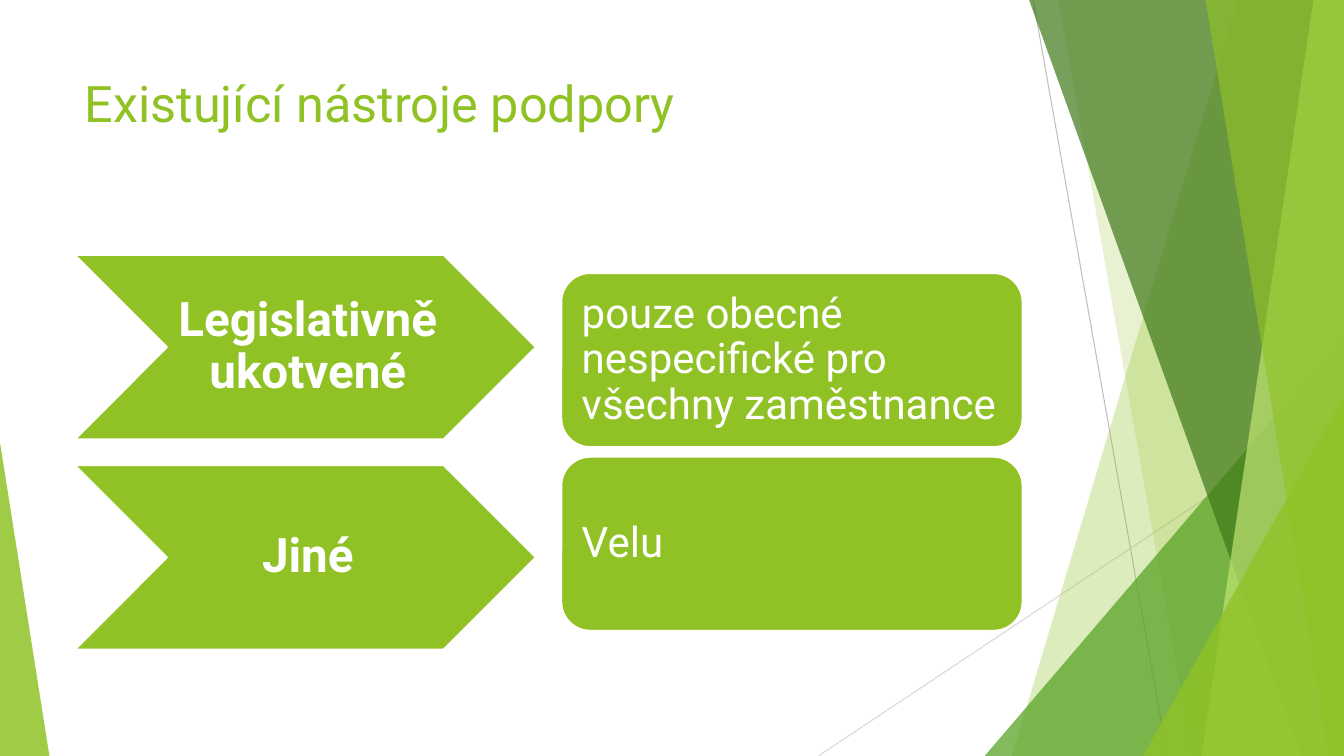
from lxml.etree import SubElement
from pptx import Presentation
from pptx.dml.color import RGBColor
from pptx.enum.shapes import MSO_CONNECTOR as Link, MSO_SHAPE as Kind
from pptx.enum.text import MSO_ANCHOR as Anchor, PP_ALIGN as Align
from pptx.oxml.ns import qn
from pptx.util import Pt

WIDE, HIGH = 960, 540
FONT = "Roboto"
COLORS = {
    "lime": "90C226", "green": "54A021", "dark": "3F7819", "pale": "C0E474",
    "white": "FFFFFF", "gray": "BFBFBF", "light": "D9D9D9",
}

TITLE = "Existující nástroje podpory"
ROWS = [
    ("Legislativně ukotvené", "pouze obecné nespecifické pro všechny zaměstnance"),
    ("Jiné", "Velu"),
]

# Lines: start, end, color
RULES = [
    ((738, 0), (833.8, HIGH), "gray"),
    ((WIDE, 290.2), (584.6, HIGH), "light"),
]
# Bands reach the right edge: top left x, bottom left x, color, opacity
BACK = [(884.2, 722.9, "lime", 30), (756, 851.8, "lime", 20)]
FRONT = [
    (735.1, 929.5, "dark", 70),
    (938.2, 858.2, "pale", 70),
    (861.1, 949, "lime", 65),
]
# Corners stand on the bottom edge: left, top, width, apex, color, opacity
MID = [(703.4, 239.8, 256.6, 1, "green", 72)]
ENDS = [
    (816.5, 283, 143.5, 1, "lime", 80),
    (0, 316.1, 35.3, 0, "lime", 85),
]

# Columns: shape, left, top, row pitch, height, text size, bold, align, insets
COLS = [
    (Kind.CHEVRON, 53.3, 182, 150.2, 131.9, 34, True, Align.CENTER, (3.6, 1.4, 0, 1.4)),
    (Kind.ROUNDED_RECTANGLE, 400.9, 195, 131.2, 124.4, 30, False, Align.LEFT, (8.6,) * 4),
]
BOX = 329.6

deck = Presentation()
deck.slide_width, deck.slide_height = Pt(WIDE), Pt(HIGH)
slide = deck.slides.add_slide(deck.slide_layouts[5])
shapes = slide.shapes


def rgb(name):
    return RGBColor.from_string(COLORS[name])


def paint(shape, color, alpha=100):
    shape.shadow.inherit = False
    shape.fill.solid()
    shape.fill.fore_color.rgb = rgb(color)
    shape.line.fill.background()
    if alpha < 100:
        tint = shape.fill._xPr.find(qn("a:solidFill"))[0]
        SubElement(tint, qn("a:alpha")).set("val", str(alpha * 1000))


def write(frame, text, size, color, align, bold=False):
    para = frame.paragraphs[0]
    para.alignment = align
    run = para.add_run()
    run.text = text
    run.font.name, run.font.size, run.font.bold = FONT, Pt(size), bold
    run.font.color.rgb = rgb(color)
    return para


def rule(start, end, color):
    line = shapes.add_connector(Link.STRAIGHT, *map(Pt, start + end))
    line.line.color.rgb = rgb(color)
    line.line.width = Pt(0.75)
    SubElement(line._element.spPr, qn("a:effectLst"))


def band(top, foot, color, alpha):
    path = shapes.build_freeform(Pt(top), 0)
    path.add_line_segments([(Pt(x), Pt(y)) for x, y in
                            ((WIDE, 0), (WIDE, HIGH), (foot, HIGH))])
    paint(path.convert_to_shape(), color, alpha)


def corner(left, top, width, apex, color, alpha):
    shape = shapes.add_shape(Kind.ISOSCELES_TRIANGLE, Pt(left), Pt(top),
                             Pt(width), Pt(HIGH - top))
    shape.adjustments[0] = apex
    paint(shape, color, alpha)


def card(text, kind, left, top, high, size, bold, align, pads):
    shape = shapes.add_shape(kind, Pt(left), Pt(top), Pt(BOX), Pt(high))
    paint(shape, "lime")
    shape.line.color.rgb = rgb("white")
    shape.line.width = Pt(1.5)
    frame = shape.text_frame
    frame.word_wrap = True
    frame.vertical_anchor = Anchor.MIDDLE
    (frame.margin_left, frame.margin_top,
     frame.margin_right, frame.margin_bottom) = map(Pt, pads)
    write(frame, text, size, "white", align, bold).line_spacing = 0.9


for draw, items in ((rule, RULES), (band, BACK), (corner, MID),
                    (band, FRONT), (corner, ENDS)):
    for item in items:
        draw(*item)

title = shapes.title
title.left, title.top, title.width, title.height = map(Pt, (53.3, 48, 676.8, 104))
title.text_frame.vertical_anchor = Anchor.TOP
write(title.text_frame, TITLE, 36, "lime", Align.LEFT)

for texts, (kind, left, top, pitch, *look) in zip(zip(*ROWS), COLS):
    for row, text in enumerate(texts):
        card(text, kind, left, top + row * pitch, *look)

deck.save("out.pptx")
